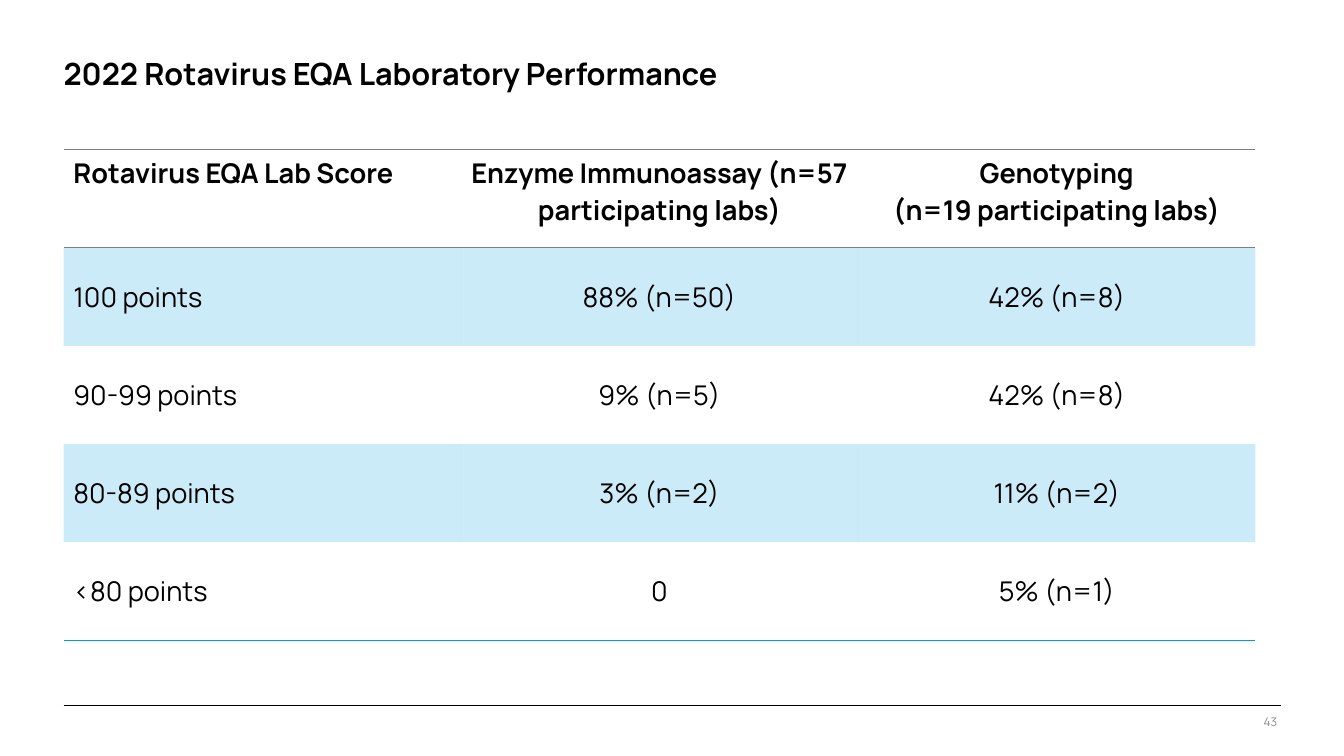
from dataclasses import dataclass

from lxml import etree
from pptx import Presentation
from pptx import util as u
from pptx.dml.color import RGBColor
from pptx.enum import shapes, text
from pptx.oxml import ns

LEFT, CENTER, RIGHT = text.PP_ALIGN.LEFT, text.PP_ALIGN.CENTER, text.PP_ALIGN.RIGHT


@dataclass(frozen=True)
class Theme:
    font: str = "Manrope"
    ink: str = "000000"
    muted: str = "8C8C8C"
    accent: str = "009CDE"
    header_rule: str = "7F7F7F"
    band_opacity: int = 20
    title_size: int = 36
    table_size: int = 32
    page_size: int = 14


class SlideBuilder:
    def __init__(self, slide, theme):
        self.slide = slide
        self.theme = theme

    def style(self, frame, size, color, align=LEFT, bold=False):
        for paragraph in frame.paragraphs:
            paragraph.alignment = align
            for run in paragraph.runs:
                run.font.name = self.theme.font
                run.font.size = u.Pt(size)
                run.font.bold = bold
                run.font.color.rgb = RGBColor.from_string(color)

    def label(self, words, left, top, width, height, size, color, align=LEFT, bold=False):
        box = self.slide.shapes.add_textbox(u.Cm(left), u.Cm(top), u.Cm(width), u.Cm(height))
        frame = box.text_frame
        frame.word_wrap = True
        frame.margin_left = frame.margin_right = frame.margin_top = frame.margin_bottom = 0
        frame.text = words
        self.style(frame, size, color, align, bold)
        return frame

    def rule(self, left, right, y):
        line = self.slide.shapes.add_connector(
            shapes.MSO_CONNECTOR.STRAIGHT, u.Cm(left), u.Cm(y), u.Cm(right), u.Cm(y))
        line.line.color.rgb = RGBColor.from_string(self.theme.ink)
        line.line.width = u.Pt(0.75)
        etree.SubElement(line.element.spPr, ns.qn("a:effectLst"))

    def borders(self, cell, top, bottom):
        properties = cell._tc.get_or_add_tcPr()
        for side, color in (("L", None), ("R", None), ("T", top), ("B", bottom)):
            edge = etree.SubElement(properties, ns.qn(f"a:ln{side}"), w=str(u.Pt(1)))
            if color:
                fill = etree.SubElement(edge, ns.qn("a:solidFill"))
                etree.SubElement(fill, ns.qn("a:srgbClr"), val=color)
            else:
                etree.SubElement(edge, ns.qn("a:noFill"))

    def band(self, cell):
        cell.fill.solid()
        cell.fill.fore_color.rgb = RGBColor.from_string(self.theme.accent)
        tint = cell._tc.tcPr.find(".//" + ns.qn("a:solidFill") + "[last()]")
        tint = cell._tc.tcPr.find(ns.qn("a:solidFill")).find(ns.qn("a:srgbClr"))
        etree.SubElement(tint, ns.qn("a:alpha"), val=str(self.theme.band_opacity * 1000))

    def table(self, rows, left, top, column_width, row_height):
        theme = self.theme
        count, columns = len(rows), len(rows[0])
        grid = self.slide.shapes.add_table(
            count, columns, u.Cm(left), u.Cm(top),
            u.Cm(column_width * columns), u.Cm(row_height * count)).table
        grid.first_row = grid.horz_banding = False
        # Rules above and below the header, and under the last row
        rules = {0: theme.header_rule, 1: theme.header_rule, count: theme.accent}
        for r, row in enumerate(rows):
            for c, words in enumerate(row):
                cell = grid.cell(r, c)
                cell.text = words
                cell.margin_left = cell.margin_right = u.Cm(0.41)
                cell.margin_top = cell.margin_bottom = u.Cm(0.2)
                cell.vertical_anchor = text.MSO_ANCHOR.MIDDLE if r else text.MSO_ANCHOR.TOP
                self.style(cell.text_frame, theme.table_size, theme.ink,
                           CENTER if c else LEFT, bold=r == 0)
                self.borders(cell, rules.get(r), rules.get(r + 1))
                if r % 2:
                    self.band(cell)
                else:
                    cell.fill.background()


SCORES = [
    ["Rotavirus EQA Lab Score", "Enzyme Immunoassay (n=57 participating labs)",
     "Genotyping\n(n=19 participating labs)"],
    ["100 points", "88% (n=50)", "42% (n=8)"],
    ["90-99 points", "9% (n=5)", "42% (n=8)"],
    ["80-89 points", "3% (n=2)", "11% (n=2)"],
    ["<80 points", "0", "5% (n=1)"],
]
MARGIN = 2.64


def main():
    deck = Presentation()
    deck.slide_width, deck.slide_height = u.Cm(55.85), u.Cm(31.42)
    theme = Theme()
    performance = SlideBuilder(deck.slides.add_slide(deck.slide_layouts[6]), theme)

    # Footer rule
    performance.rule(MARGIN, 53.24, 29.31)

    # Title
    title = performance.label("2022 Rotavirus EQA Laboratory Performance", MARGIN, 2.46,
                              51.69, 1.4, theme.title_size, theme.ink, bold=True)
    title.paragraphs[0].line_spacing = 0.9

    # Scores by assay
    performance.table(SCORES, MARGIN, 6.22, 16.51, 4.08)

    # Page number
    performance.label("43", 48.97, 29.69, 4.11, 0.61, theme.page_size, theme.muted, RIGHT)

    deck.save("out.pptx")


if __name__ == "__main__":
    main()
